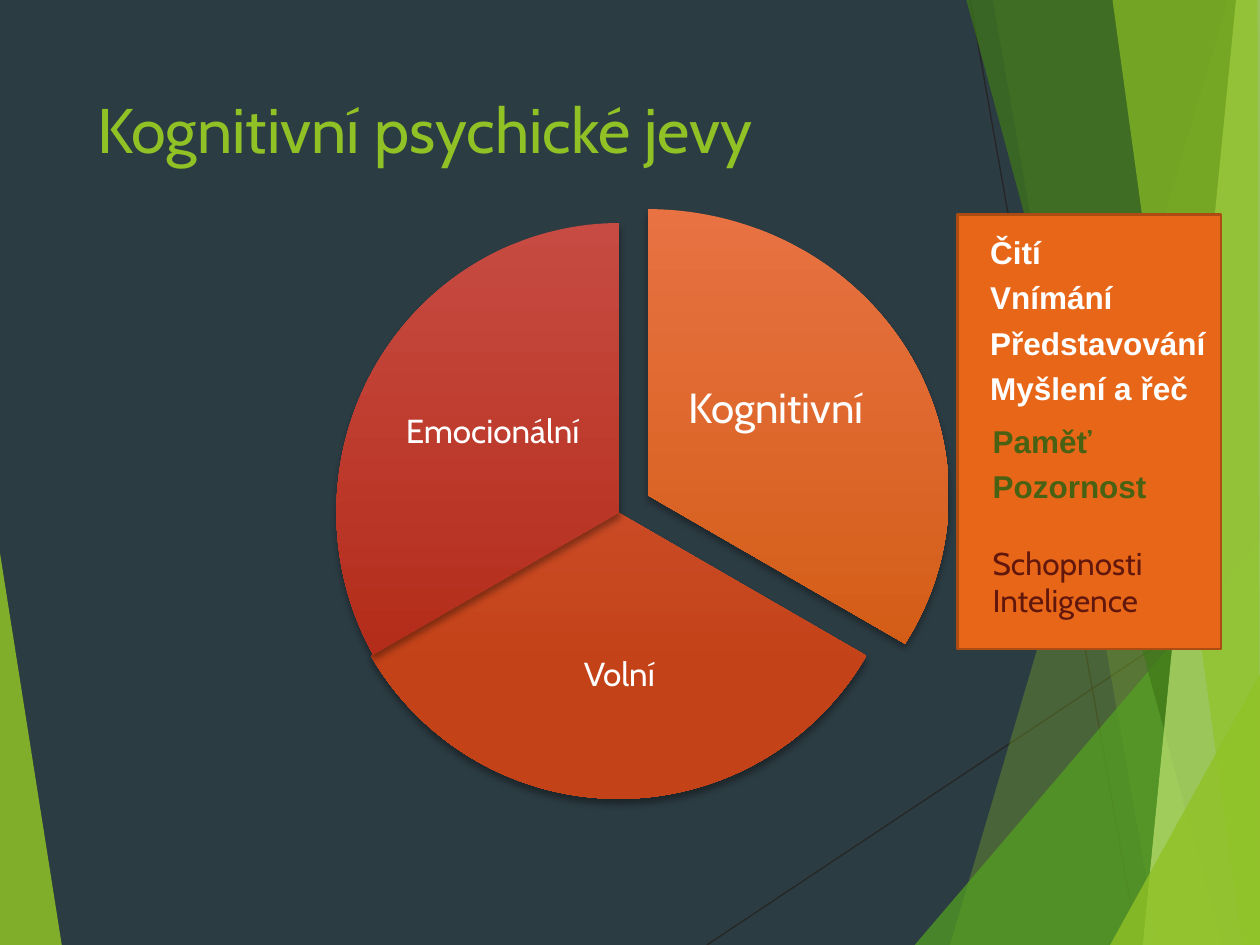
from lxml.etree import SubElement as Sub
from pptx import Presentation as Deck
from pptx.dml.color import RGBColor as Rgb
from pptx.enum.shapes import MSO_CONNECTOR as Link, MSO_SHAPE as Kind
from pptx.enum.text import MSO_ANCHOR as Anchor, PP_ALIGN as Align
from pptx.oxml.ns import qn
from pptx.util import Inches, Pt

HUES = {
    "back": "2C3C43", "lime": "90C226", "leaf": "54A021", "moss": "3F7819",
    "pale": "C0E474", "thread": "262626", "white": "FFFFFF", "panel": "E76618",
    "edge": "AD4C12", "olive": "486113", "wine": "62170D",
    "amber": "E87242", "rust": "D35D16", "coral": "D75B42", "brick": "C34217",
    "rose": "C74B42", "blood": "B32B18",
}
COLS, ROWS = 100, 75
THREADS = [(56.1, 75, 100, 45.8), (77, 0, 90.3, 75)]
FACETS = [
    ("lime", 85, [(0, 43.9), (4.9, 75), (0, 75)]),
    ("lime", 30, [(97.5, 0), (75.4, 75), (100, 75), (100, 0)]),
    ("lime", 20, [(78.8, 0), (91.9, 75), (100, 75), (100, 0)]),
    ("leaf", 72, [(72.6, 75), (100, 42.9), (100, 75)]),
    ("moss", 70, [(76.7, 0), (97, 75), (100, 75), (100, 0)]),
    ("pale", 70, [(98.1, 0), (90.7, 75), (100, 75), (100, 0)]),
    ("lime", 65, [(88.3, 0), (98.6, 75), (100, 75), (99.8, 0)]),
    ("lime", 80, [(88.1, 75), (100, 53.5), (100, 75)]),
]
SLICES = [
    ("Kognitivní", 24, (27.5, 16.6, 47.8, 45.4), (162, 18),
     ("amber", "rust"), (53.5, 25, 16.2, 15.1)),
    ("Volní", 19, (26.4, 18, 45.4, 45.4), (18, 90),
     ("coral", "brick"), (38.9, 46.6, 20.5, 14)),
    ("Emocionální", 19, (26.7, 17.7, 44.9, 45.9), (90, 162),
     ("rose", "blood"), (31.5, 26.7, 15.2, 15.3)),
]


class Page:
    """Holds the deck, its one slide and the style of each kind of element."""

    def __init__(self):
        self.deck = Deck()
        self.deck.slide_width, self.deck.slide_height = Inches(10), Inches(7.5)
        self.slide = self.deck.slides.add_slide(self.deck.slide_layouts[5])
        self.shapes = self.slide.shapes
        self.paint(self.slide.background.fill, "back")

    def hue(self, name):
        return Rgb.from_string(HUES[name])

    def paint(self, fill, name):
        fill.solid()
        fill.fore_color.rgb = self.hue(name)

    def spot(self, *sizes):
        units = self.deck.slide_width / COLS, self.deck.slide_height / ROWS
        return [round(size * units[i % 2]) for i, size in enumerate(sizes)]

    def thread(self, ends):
        line = self.shapes.add_connector(Link.STRAIGHT, *self.spot(*ends))
        line.line.color.rgb = self.hue("thread")
        line.line.width = Pt(0.75)
        Sub(line._element.spPr, qn("a:effectLst"))

    def facet(self, name, share, points):
        first, *rest = [self.spot(*point) for point in points]
        pen = self.shapes.build_freeform(*first)
        pen.add_line_segments(rest)
        shape = pen.convert_to_shape()
        shape.shadow.inherit = False
        shape.line.fill.background()
        self.paint(shape.fill, name)
        tint = shape._element.spPr.find(qn("a:solidFill"))[0]
        Sub(tint, qn("a:alpha"), val=str(share * 1000))

    def title(self, text, box):
        head = self.shapes.title
        head.left, head.top, head.width, head.height = self.spot(*box)
        head.text_frame.vertical_anchor = Anchor.TOP
        head.text_frame.word_wrap = True
        self.lines(head.text_frame, [(text, 0)], 36, "Cabin", "lime")
        self.shapes._spTree.append(head._element)

    def lines(self, frame, items, size, font, name, bold=False,
              align=Align.LEFT, more=False):
        for i, (text, gap) in enumerate(items):
            para = frame.add_paragraph() if more or i else frame.paragraphs[0]
            para.text, para.alignment = text, align
            if gap:
                para.space_before = Pt(gap)
            para.font.size, para.font.name = Pt(size), font
            para.font.bold, para.font.color.rgb = bold, self.hue(name)

    def text(self, box):
        frame = self.shapes.add_textbox(*self.spot(*box)).text_frame
        frame.word_wrap = False
        return frame

    def slice(self, text, size, box, arc, tones, spot):
        pie = self.shapes.add_shape(Kind.PIE, *self.spot(*box))
        pie.adjustments[0], pie.adjustments[1] = arc
        pie.line.fill.background()
        pie.fill.gradient()
        pie.fill.gradient_angle = 270
        for stop, tone, place in zip(pie.fill.gradient_stops, tones, (0, 0.78)):
            stop.color.rgb, stop.position = self.hue(tone), place
        pie.shadow.inherit = False
        glow = Sub(pie._element.spPr.find(qn("a:effectLst")), qn("a:outerShdw"),
                   blurRad=str(Pt(4)), dist=str(Pt(3)), dir="5400000",
                   rotWithShape="0")
        Sub(Sub(glow, qn("a:srgbClr"), val="000000"), qn("a:alpha"), val="35000")
        frame = self.text(spot)
        frame.word_wrap = True
        frame.vertical_anchor = Anchor.MIDDLE
        frame.margin_left = frame.margin_right = Inches(0.03)
        frame.margin_top = frame.margin_bottom = Inches(0.03)
        self.lines(frame, [(text, 0)], size, "Cabin", "white", align=Align.CENTER)
        frame.paragraphs[0].line_spacing = 0.9

    def panel(self, box):
        shape = self.shapes.add_shape(Kind.RECTANGLE, *self.spot(*box))
        shape.shadow.inherit = False
        self.paint(shape.fill, "panel")
        shape.line.color.rgb = self.hue("edge")
        shape.line.width = Pt(1.5)


def main():
    page = Page()
    for ends in THREADS:
        page.thread(ends)
    for facet in FACETS:
        page.facet(*facet)
    page.title("Kognitivní psychické jevy", (6.7, 6.7, 69.4, 14.4))
    for part in SLICES:
        page.slice(*part)
    page.panel((76, 17, 20.9, 34.5))
    page.lines(page.text((77.6, 18, 19.3, 18)),
               [("Čití", 0), ("Vnímání", 4.3), ("Představování", 4.3),
                ("Myšlení a řeč", 4.3)], 18, "Arial", "white", True)
    frame = page.text((77.8, 33, 14.6, 16.8))
    page.lines(frame, [("Paměť", 0), ("Pozornost", 4.3)],
               18, "Arial", "olive", True)
    page.lines(frame, [("Schopnosti", 22), ("Inteligence", 0)],
               18, "Cabin", "wine", more=True)
    page.deck.save("out.pptx")


if __name__ == "__main__":
    main()
